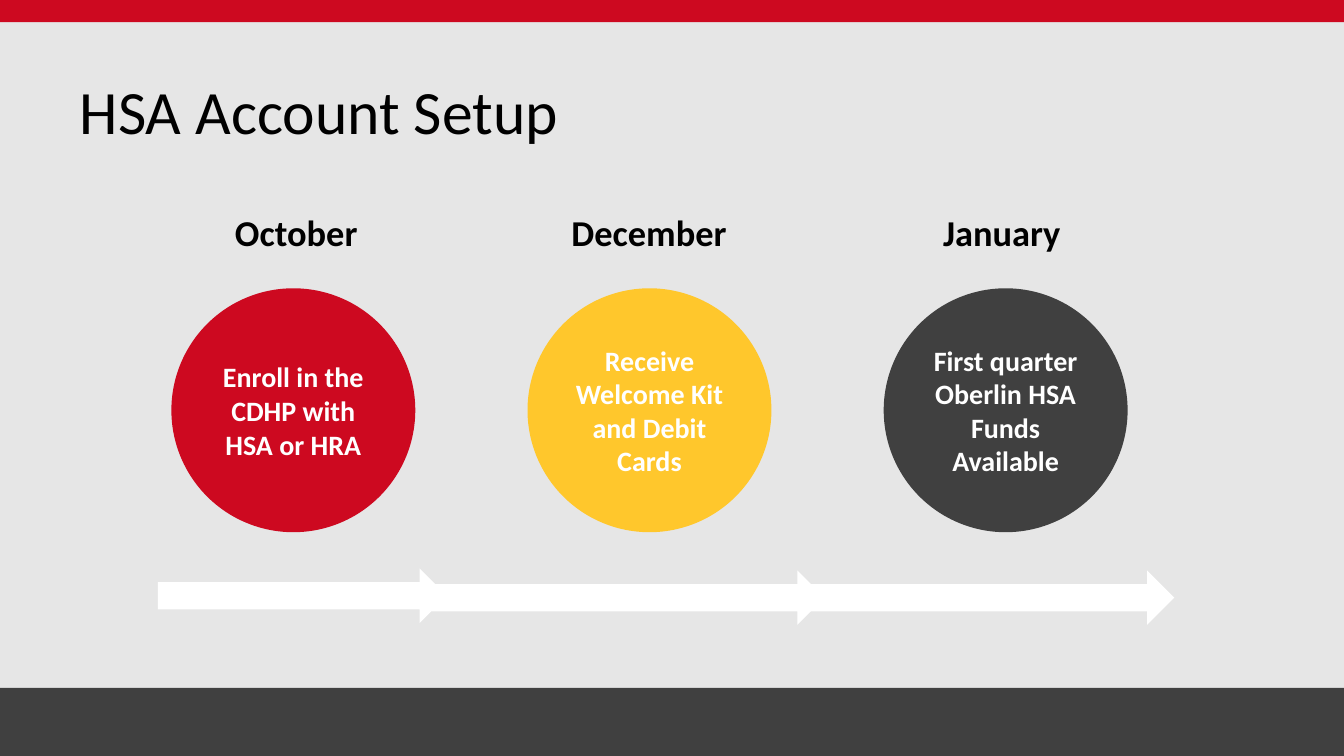
from lxml import etree
from pptx import Presentation
from pptx.dml.color import RGBColor
from pptx.enum.shapes import MSO_SHAPE
from pptx.enum.text import MSO_ANCHOR, PP_ALIGN
from pptx.oxml.ns import qn
from pptx.util import Inches, Pt

RECTANGLE, CIRCLE, ARROW = MSO_SHAPE.RECTANGLE, MSO_SHAPE.OVAL, MSO_SHAPE.RIGHT_ARROW
LEFT, CENTER, MIDDLE = PP_ALIGN.LEFT, PP_ALIGN.CENTER, MSO_ANCHOR.MIDDLE
RED, YELLOW, DARK, LIGHT, WHITE, BLACK = "CD0920", "FFC72C", "404040", "E6E6E6", "FFFFFF", "000000"
COLUMNS, ROWS = 40, 30
TITLE_FORMAT = {"size": Pt(44), "bold": False}
MONTH_FORMAT = {"size": Pt(26), "bold": True}
STEP_FORMAT = {"size": Pt(20), "bold": True}


def color(value):
    """Turn a hex string into a colour."""
    return RGBColor.from_string(value)


class TimelinePage:
    """Draw timeline elements on one page, measured in grid columns and rows."""

    def __init__(self, deck, font="Calibri"):
        """Add a title-only page and remember its style."""
        self.deck, self.font = deck, font
        self.page = deck.slides.add_slide(deck.slide_layouts[5])
        self.page.background.fill.solid()
        self.page.background.fill.fore_color.rgb = color(LIGHT)

    def across(self, columns):
        """Convert grid columns to a length."""
        return round(self.deck.slide_width * columns / COLUMNS)

    def down(self, rows):
        """Convert grid rows to a length."""
        return round(self.deck.slide_height * rows / ROWS)

    def area(self, left, top, width, height):
        """Convert a grid area to a position and size."""
        return self.across(left), self.down(top), self.across(width), self.down(height)

    def add_text(self, frame, text, ink, style, align=CENTER):
        """Add one formatted paragraph and return it."""
        para = frame.paragraphs[0]
        para.alignment = align
        span = para.add_run()
        span.text = text
        span.font.name = self.font
        span.font.color.rgb = color(ink)
        for name, value in style.items():
            setattr(span.font, name, value)
        return para

    def title(self, text, *area):
        """Place the title above the shapes drawn so far."""
        box = self.page.shapes.title
        box.left, box.top, box.width, box.height = self.area(*area)
        box.text_frame.vertical_anchor = MIDDLE
        para = self.add_text(box.text_frame, text, BLACK, TITLE_FORMAT, LEFT)
        para.line_spacing = 0.9
        box.element.getparent().append(box.element)

    def shape(self, kind, fill, *area, text=None):
        """Draw a plain filled shape, with centred text if given."""
        box = self.page.shapes.add_shape(kind, *self.area(*area))
        box.shadow.inherit = False
        box.fill.solid()
        box.fill.fore_color.rgb = color(fill)
        box.line.fill.background()
        if text:
            box.text_frame.word_wrap = True
            box.text_frame.vertical_anchor = MIDDLE
            self.add_text(box.text_frame, text, WHITE, STEP_FORMAT)

    def headings(self, labels, widths, left, top, height):
        """Draw a one-row table without fills or borders."""
        area = self.area(left, top, sum(widths), height)
        box = self.page.shapes.add_table(1, len(labels), *area)
        table = box.table
        table.first_row = table.horz_banding = False
        for index, (label, width) in enumerate(zip(labels, widths)):
            table.columns[index].width = self.across(width)
            cell = table.cell(0, index)
            cell.fill.background()
            self.add_text(cell.text_frame, label, BLACK, MONTH_FORMAT)
        for properties in box.element.iter(qn("a:tcPr")):
            for position, side in enumerate(("lnL", "lnR", "lnT", "lnB")):
                border = etree.Element(qn(f"a:{side}"))
                etree.SubElement(border, qn("a:noFill"))
                properties.insert(position, border)


def main():
    """Build the account setup timeline."""
    deck = Presentation()
    deck.slide_width, deck.slide_height = Inches(13.33), Inches(7.5)
    page = TimelinePage(deck)
    for fill, top, height in ((LIGHT, 0, 27.3), (DARK, 27.3, 2.7), (RED, 0, 0.88)):
        page.shape(RECTANGLE, fill, 0, top, COLUMNS, height)
    page.title("HSA Account Setup", 2.07, 2, 34.5, 5.08)

    steps = (
        ("Enroll in the CDHP with HSA or HRA", RED),
        ("Receive Welcome Kit and Debit Cards", YELLOW),
        ("First quarter Oberlin HSA Funds Available", DARK),
    )
    for index, (text, fill) in enumerate(steps):
        page.shape(CIRCLE, fill, 5.1 + 10.6 * index, 11.44, 7.26, 9.68, text=text)
    page.headings(("October", "December", "January"), (7.44, 13.56, 7.44), 5.1, 8.2, 2.12)
    for left, top, width in ((4.7, 22.56, 8.6), (12.84, 22.64, 11.7), (24.03, 22.64, 10.92)):
        page.shape(ARROW, WHITE, left, top, width, 2.16)
    deck.save("out.pptx")


if __name__ == "__main__":
    main()
